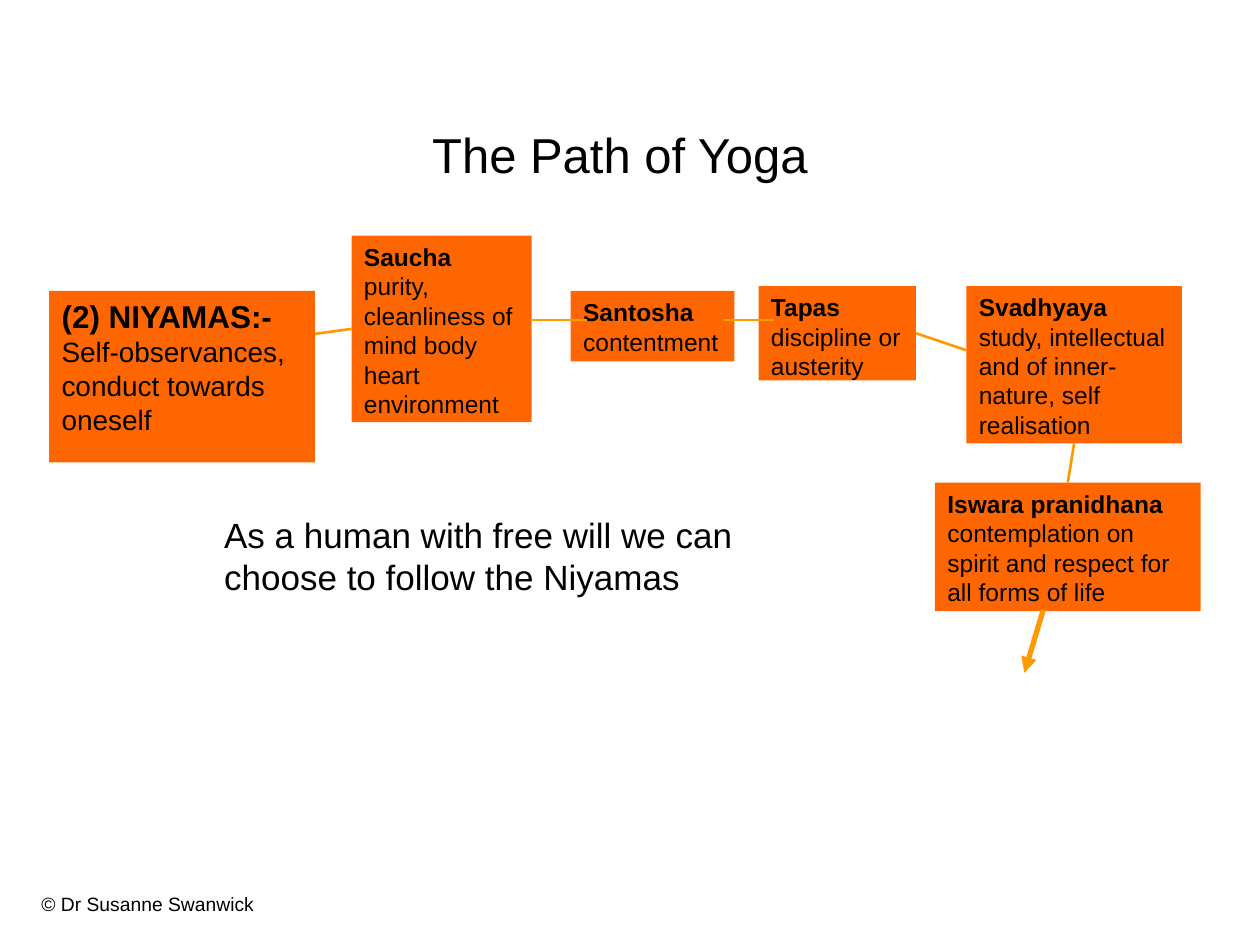
"""Build a slide showing the Niyamas as a chain of joined boxes."""
from dataclasses import dataclass
from lxml import etree
from pptx import Presentation
from pptx.dml.color import RGBColor
from pptx.enum.shapes import MSO_CONNECTOR, MSO_SHAPE
from pptx.enum.text import MSO_ANCHOR, MSO_AUTO_SIZE, PP_ALIGN
from pptx.oxml.ns import qn
from pptx.util import Inches, Pt

RECT, LINE = MSO_SHAPE.RECTANGLE, MSO_CONNECTOR.STRAIGHT
TOP, LEFT, CENTER = MSO_ANCHOR.TOP, PP_ALIGN.LEFT, PP_ALIGN.CENTER
FIXED = MSO_AUTO_SIZE.NONE


@dataclass
class Theme:
    font: str = "Arial"
    ink: RGBColor = RGBColor(0x00, 0x00, 0x00)
    box: RGBColor = RGBColor(0xFF, 0x66, 0x00)
    link: RGBColor = RGBColor(0xFF, 0x99, 0x00)
    title: int = 28
    body: int = 20
    head: int = 18
    sub: int = 16
    step: int = 14
    note: int = 11


theme = Theme()


def write(shape, paras, align=LEFT):
    frame = shape.text_frame
    frame.word_wrap = True
    frame.auto_size = FIXED
    frame.vertical_anchor = TOP
    for i, runs in enumerate(paras):
        para = frame.add_paragraph() if i else frame.paragraphs[0]
        para.alignment = align
        for text, size, bold in runs:
            run = para.add_run()
            run.text = text
            run.font.name = theme.font
            run.font.size = Pt(size)
            run.font.bold = bold
            run.font.color.rgb = theme.ink


def join(start, end, width=1.5):
    x1, y1, x2, y2 = [Inches(n) for n in start + end]
    line = slide.shapes.add_connector(LINE, x1, y1, x2, y2)
    line.line.color.rgb = theme.link
    line.line.width = Pt(width)
    etree.SubElement(line._element.spPr, qn("a:effectLst"))
    return line


prs = Presentation()
prs.slide_width, prs.slide_height = Inches(10), Inches(7.5)
slide = prs.slides.add_slide(prs.slide_layouts[5])

title = slide.shapes.title
title.left, title.top = Inches(0.47), Inches(0.94)
title.width, title.height = Inches(8.9), Inches(0.57)
write(title, [[("The Path of Yoga", theme.title, False)]], CENTER)

steps = [
    ("Saucha ", "purity, cleanliness of mind body heart environment", (2.79, 1.87, 1.43, 1.48)),
    ("Santosha", " contentment", (4.53, 2.31, 1.3, 0.56)),
    ("Tapas ", "discipline or austerity", (6.02, 2.27, 1.25, 0.75)),
    ("Svadhyaya", " study, intellectual and of inner-nature, self realisation",
     (7.67, 2.27, 1.71, 1.25)),
    ("Iswara pranidhana", " contemplation on spirit and respect for all forms of life",
     (7.42, 3.83, 2.11, 1.02)),
]
cards = [((0.39, 2.31, 2.11, 1.36), [
    [("(2) NIYAMAS:-", theme.head, True)],
    [("Self-observances, conduct towards oneself", theme.sub, False)],
])]
for name, sense, place in steps:
    cards.append((place, [[(name, theme.step, True), (sense, theme.step, False)]]))

boxes = []
for place, paras in cards:
    box = slide.shapes.add_shape(RECT, *[Inches(n) for n in place])
    box.shadow.inherit = False
    box.fill.solid()
    box.fill.fore_color.rgb = theme.box
    box.line.fill.background()
    write(box, paras)
    boxes.append(box)
root, saucha, santosha, tapas, study, iswara = boxes

arrow = join((8.28, 4.84), (8.13, 5.34), 3)
etree.SubElement(arrow.line._get_or_add_ln(), qn("a:tailEnd"), type="triangle")
join((5.74, 2.54), (6.14, 2.54))
join((2.5, 2.65), (2.79, 2.61)).end_connect(saucha, 1)
join((4.21, 2.54), (4.66, 2.54))
join((7.27, 2.64), (7.67, 2.78)).begin_connect(tapas, 3)
drop = join((8.52, 3.52), (8.45, 3.83))
drop.begin_connect(study, 2)
drop.end_connect(iswara, 0)

texts = [
    ("As a human with free will we can choose to follow the Niyamas", theme.body,
     (1.68, 4.03, 4.72, 0.77)),
    ("© Dr Susanne Swanwick", theme.note, (0.23, 7.03, 2.15, 0.29)),
]
for text, size, place in texts:
    area = slide.shapes.add_textbox(*[Inches(n) for n in place])
    write(area, [[(text, size, False)]])

prs.save("out.pptx")
